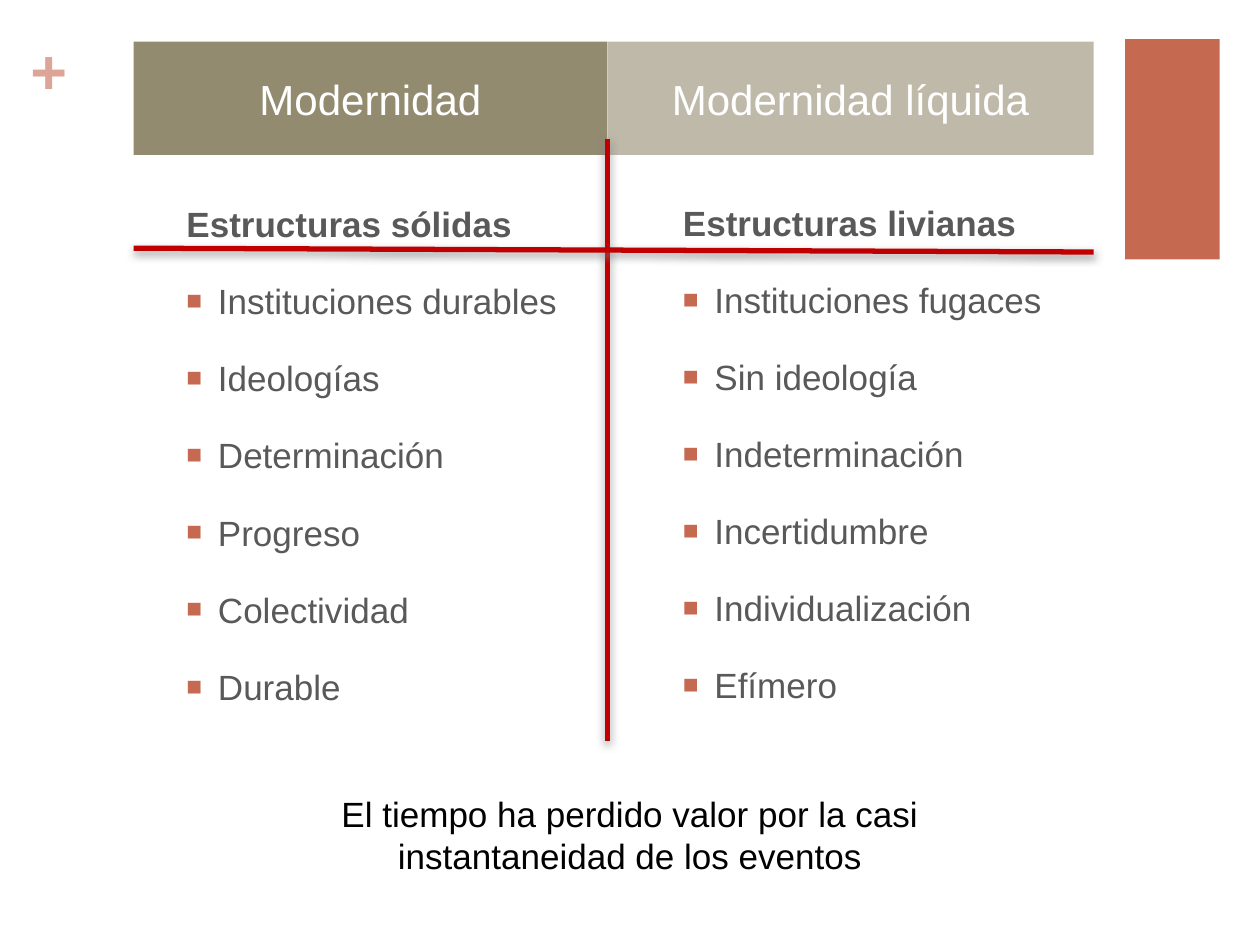
from lxml.etree import SubElement
from pptx import Presentation
from pptx.dml.color import RGBColor
from pptx.enum.shapes import MSO_CONNECTOR, MSO_SHAPE
from pptx.enum.text import MSO_ANCHOR, MSO_AUTO_SIZE, PP_ALIGN
from pptx.oxml.ns import qn
from pptx.util import Inches, Pt

THEME = {
    "font": "Arial",
    "accent": "C66951", "plus": "DDA597", "rule": "C00000", "shadow": "808080",
    "list": "595959", "white": "FFFFFF", "black": "000000",
    "plus_size": 36, "heading_size": 24, "text_size": 20,
}
COMPARISON_LAYOUT = 4
LEFT, MIDDLE, RIGHT = 1.06, 4.82, 8.68  # edges of the two columns
HEADING_TOP, HEADING_HEIGHT = 0.33, 0.9

# heading, heading colour, heading left and right, list box, list title, items
COLUMNS = [
    ("Modernidad", "928B70", LEFT, MIDDLE, (1.38, 1.56, 4.23, 4.03), "Estructuras sólidas",
     ["Instituciones durables", "Ideologías", "Determinación",
      "Progreso", "Colectividad", "Durable"]),
    ("Modernidad líquida", "BEB9A9", MIDDLE, RIGHT, (5.32, 1.55, 3.94, 4.03), "Estructuras livianas",
     ["Instituciones fugaces", "Sin ideología", "Indeterminación",
      "Incertidumbre", "Individualización", "Efímero"]),
]
RULES = [(MIDDLE, 1.1, MIDDLE, 5.88), (LEFT, 1.97, RIGHT, 2)]


def place(box, left, top, width, height, **frame_format):
    """Move a box and set its text frame, wrapped and with a fixed size."""
    for name, value in zip(("left", "top", "width", "height"), (left, top, width, height)):
        setattr(box, name, Inches(value))
    frame_format = {"word_wrap": True, "auto_size": MSO_AUTO_SIZE.NONE,
                    "vertical_anchor": MSO_ANCHOR.TOP, **frame_format}
    for name, value in frame_format.items():
        setattr(box.text_frame, name, value)


def write(para, text, size, color, bold=False, align=PP_ALIGN.LEFT, before=0, bullet=False):
    para.alignment, para.space_before = align, Pt(before)
    span = para.add_run()
    span.text = text
    for name, value in {"name": THEME["font"], "size": Pt(THEME[size]), "bold": bold}.items():
        setattr(span.font, name, value)
    span.font.color.rgb = RGBColor.from_string(THEME[color])

    properties = para._p.get_or_add_pPr()
    indent = Inches(0.25) if bullet else 0
    properties.set("marL", str(indent))
    properties.set("indent", str(-indent))
    if bullet:
        bullet_color = SubElement(properties, qn("a:buClr"))
        SubElement(bullet_color, qn("a:srgbClr"), val=THEME["accent"])
        SubElement(properties, qn("a:buSzPct"), val="75000")
        SubElement(properties, qn("a:buFont"), typeface=THEME["font"])
        SubElement(properties, qn("a:buChar"), char="■")
    else:
        SubElement(properties, qn("a:buNone"))


deck = Presentation()
deck.slide_width, deck.slide_height = Inches(10), Inches(7.5)
page = deck.slides.add_slide(deck.slide_layouts[COMPARISON_LAYOUT])
title, *bodies = list(page.placeholders)[:5]
title.element.getparent().remove(title.element)

# Decoration: side block and plus sign
block = page.shapes.add_shape(MSO_SHAPE.RECTANGLE, Inches(8.93), Inches(0.31), Inches(0.75), Inches(1.75))
block.shadow.inherit = False
block.fill.solid()
block.fill.fore_color.rgb = RGBColor.from_string(THEME["accent"])
block.line.fill.background()

no_margins = dict.fromkeys(("margin_left", "margin_top", "margin_right", "margin_bottom"), 0)
plus = page.shapes.add_textbox(0, 0, 0, 0)
place(plus, 0.24, 0.25, 0.29, 0.61, **no_margins)
write(plus.text_frame.paragraphs[0], "+", "plus_size", "plus", bold=True)

# The two compared columns
for column, heading, listing in zip(COLUMNS, bodies[::2], bodies[1::2]):
    name, color, left, right, list_area, list_title, items = column
    place(heading, left, HEADING_TOP, right - left, HEADING_HEIGHT,
          vertical_anchor=MSO_ANCHOR.MIDDLE, margin_top=0, margin_bottom=0)
    heading.fill.solid()
    heading.fill.fore_color.rgb = RGBColor.from_string(color)
    write(heading.text_frame.paragraphs[0], name, "heading_size", "white", align=PP_ALIGN.CENTER)

    place(listing, *list_area)
    write(listing.text_frame.paragraphs[0], list_title, "text_size", "list", bold=True, before=20)
    for item in items:
        write(listing.text_frame.add_paragraph(), item, "text_size", "list", before=20, bullet=True)

# Crossing rules with a soft shadow below
for ends in RULES:
    rule = page.shapes.add_connector(MSO_CONNECTOR.STRAIGHT, *map(Inches, ends))
    rule.line.width = Pt(3)
    rule.line.color.rgb = RGBColor.from_string(THEME["rule"])
    effects = SubElement(rule._element.spPr, qn("a:effectLst"))
    shadow = SubElement(effects, qn("a:outerShdw"), blurRad=str(Pt(5)), dist=str(Pt(2)),
                        dir="5400000", rotWithShape="0")
    shadow_color = SubElement(shadow, qn("a:srgbClr"), val=THEME["shadow"])
    SubElement(shadow_color, qn("a:alpha"), val="75000")

# Conclusion
conclusion = page.shapes.add_textbox(0, 0, 0, 0)
place(conclusion, 1.85, 6.24, 6.3, 0.77)
write(conclusion.text_frame.paragraphs[0],
      "El tiempo ha perdido valor por la casi instantaneidad de los eventos",
      "text_size", "black", align=PP_ALIGN.CENTER)

deck.save("out.pptx")
